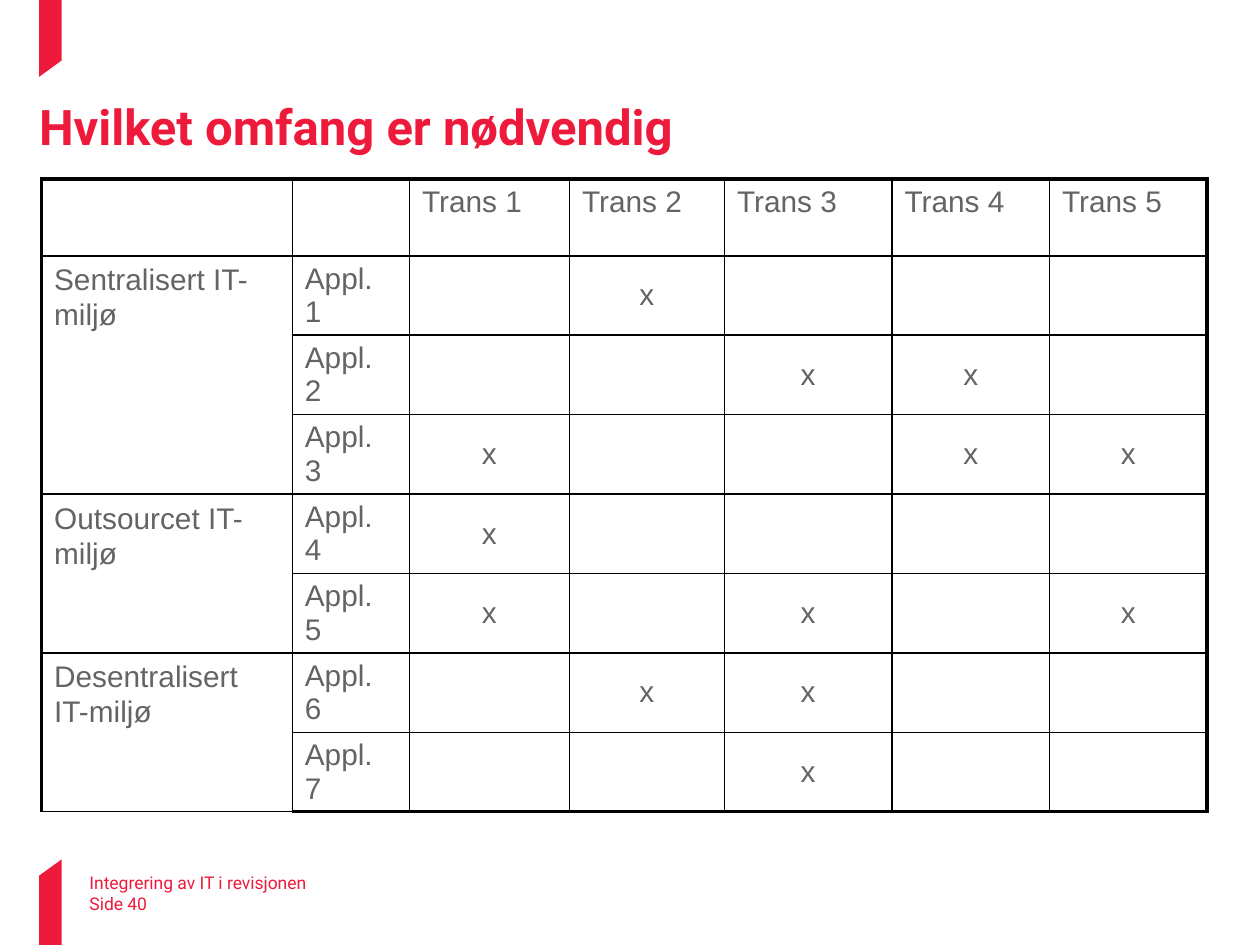
from dataclasses import dataclass

from lxml import etree
from pptx import Presentation
from pptx import util as u
from pptx.dml.color import RGBColor
from pptx.enum import text
from pptx.oxml import ns


@dataclass(frozen=True)
class Theme:
    """Colours, fonts and type sizes of the slide."""
    red: str = "ED1A3B"
    grey: str = "646464"
    black: str = "000000"
    heading: str = "Roboto"
    body: str = "Arial"
    title_size: float = 28
    table_size: float = 17
    footer_size: float = 10
    outer_line: float = 2.25
    inner_line: float = 1


T = Theme()
COLUMNS = (1.99, 0.93, 1.27, 1.23, 1.33, 1.25, 1.25)
ROW_HEIGHT = 0.61
ENVIRONMENTS = (
    ("Sentralisert IT-miljø", ((2,), (3, 4), (1, 4, 5))),
    ("Outsourcet IT-miljø", ((1,), (1, 3, 5))),
    ("Desentralisert IT-miljø", ((2, 3), (3,))),
)
RIBBONS = (
    ((0.31, 0), (0.49, 0), (0.49, 0.48), (0.31, 0.61)),
    ((0.31, 6.95), (0.49, 6.82), (0.49, 7.5), (0.31, 7.5)),
)


def set_attrs(obj, **values):
    """Set every given attribute on an object."""
    for name, value in values.items():
        setattr(obj, name, value)


def write(tf, content, size, font, color, bold=False, **paragraph):
    """Write one formatted paragraph into a text frame."""
    p = tf.paragraphs[0]
    set_attrs(p, **paragraph)
    r = p.add_run()
    r.text = content
    set_attrs(r.font, size=u.Pt(size), name=font, bold=bold)
    r.font.color.rgb = RGBColor.from_string(color)


def clear_frame(tf):
    """Make a text frame wrap without margins or resizing."""
    set_attrs(tf, margin_left=0, margin_right=0, margin_top=0, margin_bottom=0,
              word_wrap=True, auto_size=text.MSO_AUTO_SIZE.NONE,
              vertical_anchor=text.MSO_ANCHOR.TOP)


def add_ribbon(s, points):
    """Draw a slanted red ribbon through the given points."""
    start, *rest = [(u.Inches(x), u.Inches(y)) for x, y in points]
    builder = s.shapes.build_freeform(*start)
    builder.add_line_segments(rest, close=True)
    sp = builder.convert_to_shape()
    sp.shadow.inherit = False
    sp.fill.solid()
    sp.fill.fore_color.rgb = RGBColor.from_string(T.red)
    sp.line.fill.background()


def add_title(s, content):
    """Place and fill the title placeholder."""
    sp = s.shapes.title
    set_attrs(sp, left=u.Inches(0.31), top=u.Inches(0.74),
              width=u.Inches(9.37), height=u.Inches(1.06))
    clear_frame(sp.text_frame)
    write(sp.text_frame, content, T.title_size, T.heading, T.red, bold=True,
          alignment=text.PP_ALIGN.LEFT, line_spacing=1.05)


def add_footer(s, content, top):
    """Add one footer line."""
    sp = s.shapes.add_textbox(u.Inches(0.71), u.Inches(top),
                              u.Inches(7.32), u.Inches(0.18))
    clear_frame(sp.text_frame)
    write(sp.text_frame, content, T.footer_size, T.heading, T.red)


def add_borders(cell, widths):
    """Draw the left, right, top and bottom borders of a cell."""
    tc_pr = cell._tc.get_or_add_tcPr()
    for side, width in zip("LRTB", widths):
        ln = etree.SubElement(tc_pr, ns.qn(f"a:ln{side}"), w=str(u.Pt(width)))
        fill = etree.SubElement(ln, ns.qn("a:solidFill"))
        etree.SubElement(fill, ns.qn("a:srgbClr"), val=T.black)


def fill_cell(cell, content, **paragraph):
    """Write table text into a cell."""
    write(cell.text_frame, content, T.table_size, T.body, T.grey, **paragraph)


def add_grid(s, row_count):
    """Add an unfilled table with heavy outer and light inner borders."""
    col_count = len(COLUMNS)
    frame = s.shapes.add_table(row_count, col_count, u.Inches(0.33), u.Inches(1.42),
                               u.Inches(sum(COLUMNS)), u.Inches(ROW_HEIGHT * row_count))
    table = frame.table
    set_attrs(table, first_row=False, horz_banding=False)
    for column, width in zip(table.columns, COLUMNS):
        column.width = u.Inches(width)
    for i, row in enumerate(table.rows):
        row.height = u.Inches(ROW_HEIGHT)
        for j, cell in enumerate(row.cells):
            edges = (j == 0, j == col_count - 1, i == 0, i == row_count - 1)
            add_borders(cell, [T.outer_line if e else T.inner_line for e in edges])
            cell.fill.background()
    return table


def add_scope_table(s):
    """Show which transactions each application covers, by environment."""
    table = add_grid(s, 1 + sum(len(apps) for _, apps in ENVIRONMENTS))
    for n in range(1, 6):
        fill_cell(table.cell(0, n + 1), f"Trans {n}")
    row = 1
    for name, apps in ENVIRONMENTS:
        table.cell(row, 0).merge(table.cell(row + len(apps) - 1, 0))
        fill_cell(table.cell(row, 0), name, line_spacing=u.Pt(20))
        for row, marks in enumerate(apps, row):
            fill_cell(table.cell(row, 1), f"Appl. {row}")
            for n in marks:
                cell = table.cell(row, n + 1)
                cell.vertical_anchor = text.MSO_ANCHOR.MIDDLE
                fill_cell(cell, "x", alignment=text.PP_ALIGN.CENTER)
        row += 1


def main():
    """Build and save the slide."""
    prs = Presentation()
    set_attrs(prs, slide_width=u.Inches(10), slide_height=u.Inches(7.5))
    s = prs.slides.add_slide(prs.slide_layouts[5])
    for points in RIBBONS:
        add_ribbon(s, points)
    add_footer(s, "Integrering av IT i revisjonen", 6.92)
    add_footer(s, "Side 40", 7.09)
    add_title(s, "Hvilket omfang er nødvendig")
    add_scope_table(s)
    prs.save("out.pptx")


if __name__ == "__main__":
    main()
